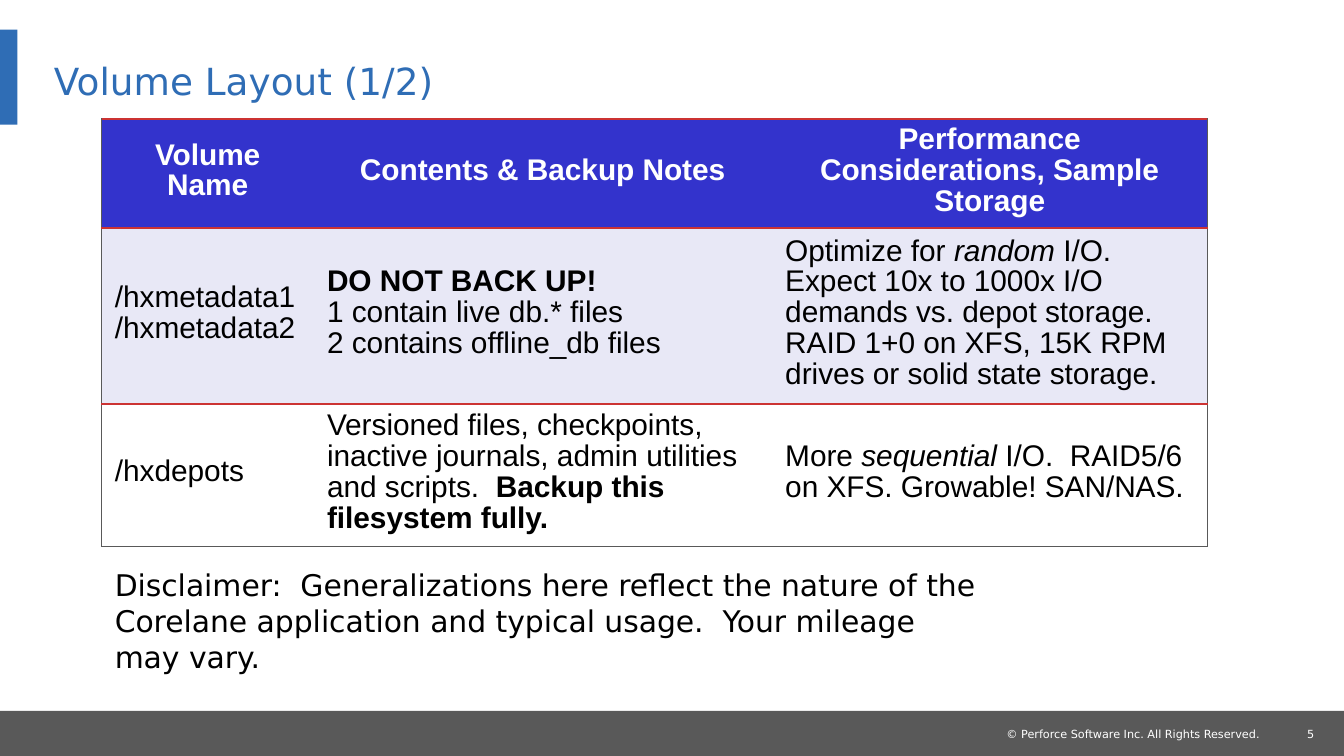
from lxml import etree
from pptx import Presentation
from pptx.dml.color import RGBColor
from pptx.enum.shapes import MSO_SHAPE
from pptx.enum.text import MSO_ANCHOR, PP_ALIGN
from pptx.oxml.ns import qn
from pptx.util import Cm, Pt

RECT = MSO_SHAPE.RECTANGLE
MIDDLE, TOP = MSO_ANCHOR.MIDDLE, MSO_ANCHOR.TOP
LEFT, CENTER, RIGHT = PP_ALIGN.LEFT, PP_ALIGN.CENTER, PP_ALIGN.RIGHT

COLORS = {
    "accent": "2F6DB5",
    "footer": "595959",
    "header": "3333CC",
    "band": "E8E8F6",
    "rule": "CC3333",
    "edge": "595959",
    "white": "FFFFFF",
    "black": "000000",
}

TITLE = "Volume Layout (1/2)"
HEADER = [
    "Volume Name",
    "Contents & Backup Notes",
    "Performance Considerations, Sample Storage",
]
ROWS = [
    [
        ["/hxmetadata1", "/hxmetadata2"],
        [[("DO NOT BACK UP!", "b")], "1 contain live db.* files", "2 contains offline_db files"],
        [[("Optimize for ", ""), ("random ", "i"),
          ("I/O.  Expect 10x to 1000x I/O demands vs. depot storage.  "
           "RAID 1+0 on XFS, 15K RPM drives or solid state storage.", "")]],
    ],
    [
        ["/hxdepots"],
        [[("Versioned files, checkpoints, inactive journals, admin utilities and scripts.  ", ""),
          ("Backup this filesystem fully.", "b")]],
        [[("More ", ""), ("sequential ", "i"),
          ("I/O.  RAID5/6 on XFS. Growable! SAN/NAS.", "")]],
    ],
]
DISCLAIMER = ("Disclaimer:  Generalizations here reflect the nature of the Corelane "
              "application and typical usage.  Your mileage may vary.")
COPYRIGHT = "© Perforce Software Inc. All Rights Reserved."
PAGE = "5"

COL_WIDTHS = [4.01, 8.66, 8.23]
ROW_HEIGHTS = [1.9, 3.28, 2.5]
ROW_FILLS = ["header", "band", "white"]


def rgb(name):
    return RGBColor.from_string(COLORS[name])


def write(tf, paragraphs, size=16, font="DejaVu Sans", color="black", bold=False,
          align=LEFT, spacing=None):
    for i, runs in enumerate(paragraphs):
        p = tf.paragraphs[0] if i == 0 else tf.add_paragraph()
        p.alignment = align
        p.space_before = Pt(0)
        if spacing:
            p.line_spacing = spacing
        for text, style in [(runs, "")] if isinstance(runs, str) else runs:
            r = p.add_run()
            r.text = text
            r.font.size = Pt(size)
            r.font.name = font
            r.font.color.rgb = rgb(color)
            r.font.bold = bold or style == "b"
            r.font.italic = style == "i"


def place(sp, left, top, width, height):
    sp.left, sp.top, sp.width, sp.height = Cm(left), Cm(top), Cm(width), Cm(height)


def set_frame(tf, insets=(0, 0), anchor=TOP, wrap=True):
    tf.margin_left = tf.margin_right = Cm(insets[0])
    tf.margin_top = tf.margin_bottom = Cm(insets[1])
    tf.vertical_anchor = anchor
    tf.word_wrap = wrap


def add_text(s, box, text, insets=(0, 0), wrap=True, **fmt):
    tf = s.shapes.add_textbox(*map(Cm, box)).text_frame
    set_frame(tf, insets, wrap=wrap)
    write(tf, [text], **fmt)


def add_bar(s, box, color):
    sp = s.shapes.add_shape(RECT, *map(Cm, box))
    sp.shadow.inherit = False
    sp.fill.solid()
    sp.fill.fore_color.rgb = rgb(color)
    sp.line.fill.background()


def set_borders(cell, borders):
    tc_pr = cell._tc.get_or_add_tcPr()
    for i, (side, border) in enumerate(zip("LRTB", borders)):
        ln = etree.Element(qn(f"a:ln{side}"))
        if border:
            color, width = border
            ln.set("w", str(Pt(width)))
            fill = etree.SubElement(ln, qn("a:solidFill"))
            etree.SubElement(fill, qn("a:srgbClr")).set("val", COLORS[color])
        else:
            etree.SubElement(ln, qn("a:noFill"))
        tc_pr.insert(i, ln)


def add_volume_table(s):
    grid = [[[text] for text in HEADER]] + ROWS
    n_rows, n_cols = len(grid), len(HEADER)
    table = s.shapes.add_table(n_rows, n_cols, Cm(1.92), Cm(2.25),
                               Cm(sum(COL_WIDTHS)), Cm(sum(ROW_HEIGHTS))).table
    for col, width in zip(table.columns, COL_WIDTHS):
        col.width = Cm(width)
    for row, height in zip(table.rows, ROW_HEIGHTS):
        row.height = Cm(height)
    rule, edge = ("rule", 1), ("edge", 0.5)
    for i, row in enumerate(grid):
        for j, paragraphs in enumerate(row):
            cell = table.cell(i, j)
            cell.vertical_anchor = MIDDLE
            cell.margin_left = cell.margin_right = Cm(0.25)
            cell.margin_top, cell.margin_bottom = Cm(0.04), Cm(0.13)
            cell.fill.solid()
            cell.fill.fore_color.rgb = rgb(ROW_FILLS[i])
            set_borders(cell, [edge if j == 0 else None,
                               edge if j == n_cols - 1 else None,
                               rule,
                               edge if i == n_rows - 1 else rule])
            head = i == 0
            write(cell.text_frame, paragraphs, font="Arial", bold=head, spacing=0.93,
                  color="white" if head else "black", align=CENTER if head else LEFT)


def main():
    prs = Presentation()
    prs.slide_width, prs.slide_height = Cm(25.4), Cm(14.29)
    s = prs.slides.add_slide(prs.slide_layouts[5])

    add_bar(s, (0, 13.44, 25.4, 0.85), "footer")
    add_text(s, (23.75, 13.74, 1.09, 0.25), PAGE, size=6, color="white", align=RIGHT)
    add_text(s, (19.02, 13.74, 4.93, 0.25), COPYRIGHT, wrap=False, size=6, color="white")
    add_bar(s, (0, 0.56, 0.33, 1.8), "accent")

    title = s.shapes.title
    place(title, 1.02, 0.71, 19.66, 1.52)
    set_frame(title.text_frame, anchor=MIDDLE)
    write(title.text_frame, [TITLE], size=20, color="accent", spacing=Pt(27))

    add_volume_table(s)
    add_text(s, (1.92, 10.59, 16.92, 2.31), DISCLAIMER, insets=(0.25, 0.13))
    prs.save("out.pptx")


if __name__ == "__main__":
    main()
